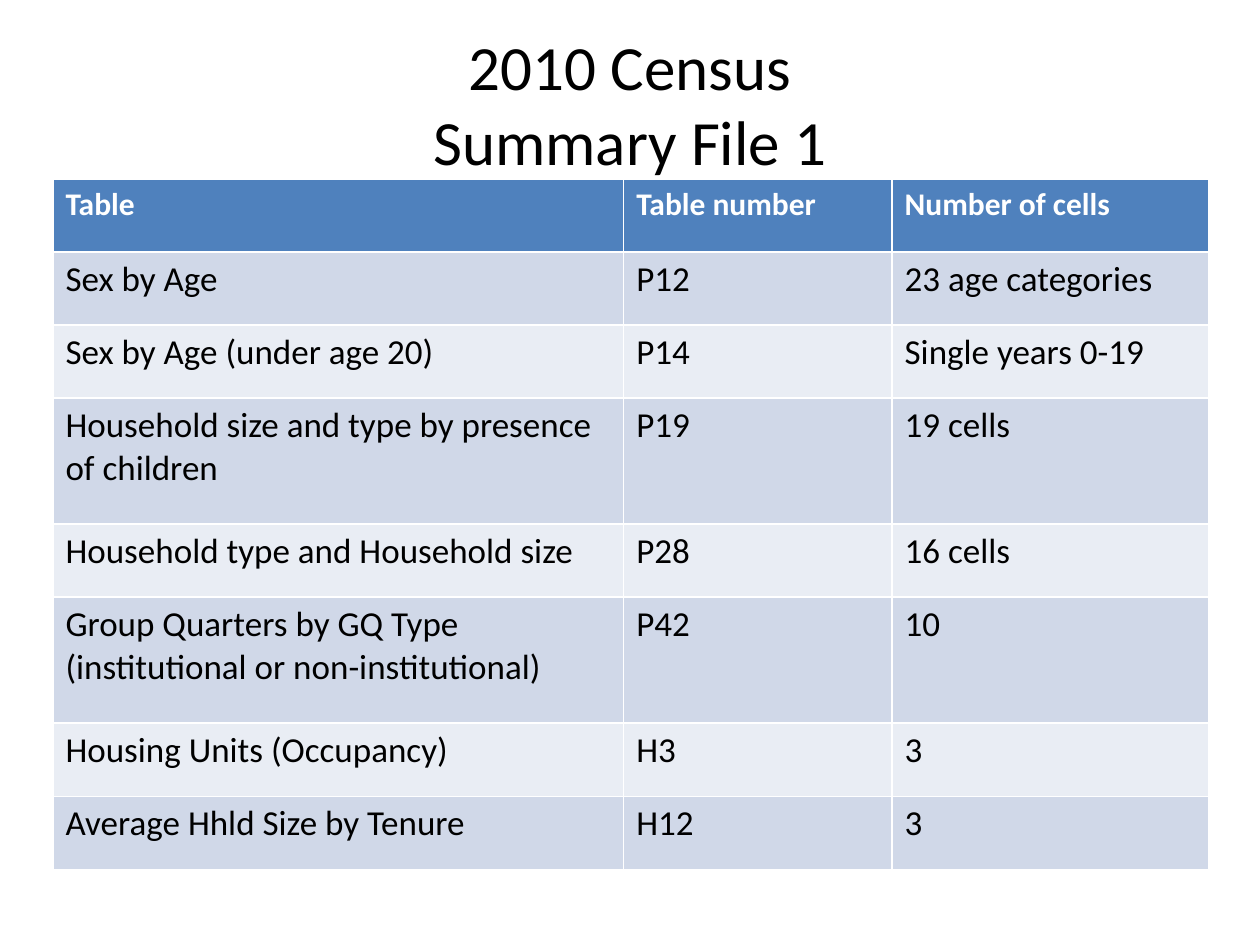
"""Build a slide listing the tables of 2010 Census Summary File 1."""
from dataclasses import dataclass
from typing import Any

from pptx import Presentation
from pptx.dml.color import RGBColor
from pptx.enum.text import MSO_ANCHOR, MSO_AUTO_SIZE, PP_ALIGN
from pptx.util import Inches, Pt


@dataclass
class TableRow:
    cells: tuple[str, str, str]
    height: float = 0.58


ROWS = [
    TableRow(("Table", "Table number", "Number of cells")),
    TableRow(("Sex by Age", "P12", "23 age categories")),
    TableRow(("Sex by Age (under age 20)", "P14", "Single years 0-19")),
    TableRow(("Household size and type by presence of children", "P19", "19 cells"), 1),
    TableRow(("Household type and Household size", "P28", "16 cells")),
    TableRow(("Group Quarters by GQ Type (institutional or non-institutional)", "P42", "10"), 1),
    TableRow(("Housing Units (Occupancy)", "H3", "3")),
    TableRow(("Average Hhld Size by Tenure", "H12", "3")),
]
WIDTHS = [4.53, 2.13, 2.51]
BANDS = ["E9EDF4", "D0D8E8"]
HEADER_FILL = "4F81BD"
TITLE_FONT = {"name": "Calibri", "size": Pt(36)}
HEADER_FONT = {"name": "Calibri", "size": Pt(18), "bold": True}
BODY_FONT = {"name": "Calibri", "size": Pt(20), "bold": False}


def set_color(fmt: Any, color: str) -> None:
    fmt.rgb = RGBColor.from_string(color)


def set_font(p: Any, font: dict[str, Any], color: str) -> None:
    for r in p.runs:
        for name, value in font.items():
            setattr(r.font, name, value)
        set_color(r.font.color, color)


def add_title(s: Any, text: str) -> None:
    sp = s.shapes.title
    box = {"left": 0.5, "top": 0.3, "width": 9, "height": 1.03}
    for name, value in box.items():
        setattr(sp, name, Inches(value))
    tf = sp.text_frame
    tf.auto_size = MSO_AUTO_SIZE.NONE
    tf.vertical_anchor = MSO_ANCHOR.MIDDLE
    p = tf.paragraphs[0]
    p.text = text
    p.alignment = PP_ALIGN.CENTER
    set_font(p, TITLE_FONT, "000000")


def fill_cell(cell: Any, text: str, row: int) -> None:
    cell.text = text
    cell.fill.solid()
    set_color(cell.fill.fore_color, BANDS[row % 2] if row else HEADER_FILL)
    font, color = (BODY_FONT, "000000") if row else (HEADER_FONT, "FFFFFF")
    set_font(cell.text_frame.paragraphs[0], font, color)


def add_census_table(s: Any, rows: list[TableRow]) -> None:
    height = sum(row.height for row in rows)
    table = s.shapes.add_table(
        len(rows), len(WIDTHS), Inches(0.42), Inches(1.42),
        Inches(sum(WIDTHS)), Inches(height),
    ).table
    for col, width in zip(table.columns, WIDTHS):
        col.width = Inches(width)
    for i, row in enumerate(rows):
        table.rows[i].height = Inches(row.height)
        for j, text in enumerate(row.cells):
            fill_cell(table.cell(i, j), text, i)


def main() -> None:
    prs = Presentation()
    prs.slide_width, prs.slide_height = Inches(10), Inches(7.5)
    s = prs.slides.add_slide(prs.slide_layouts[5])
    add_title(s, "2010 Census\vSummary File 1")
    add_census_table(s, ROWS)
    prs.save("out.pptx")


if __name__ == "__main__":
    main()
